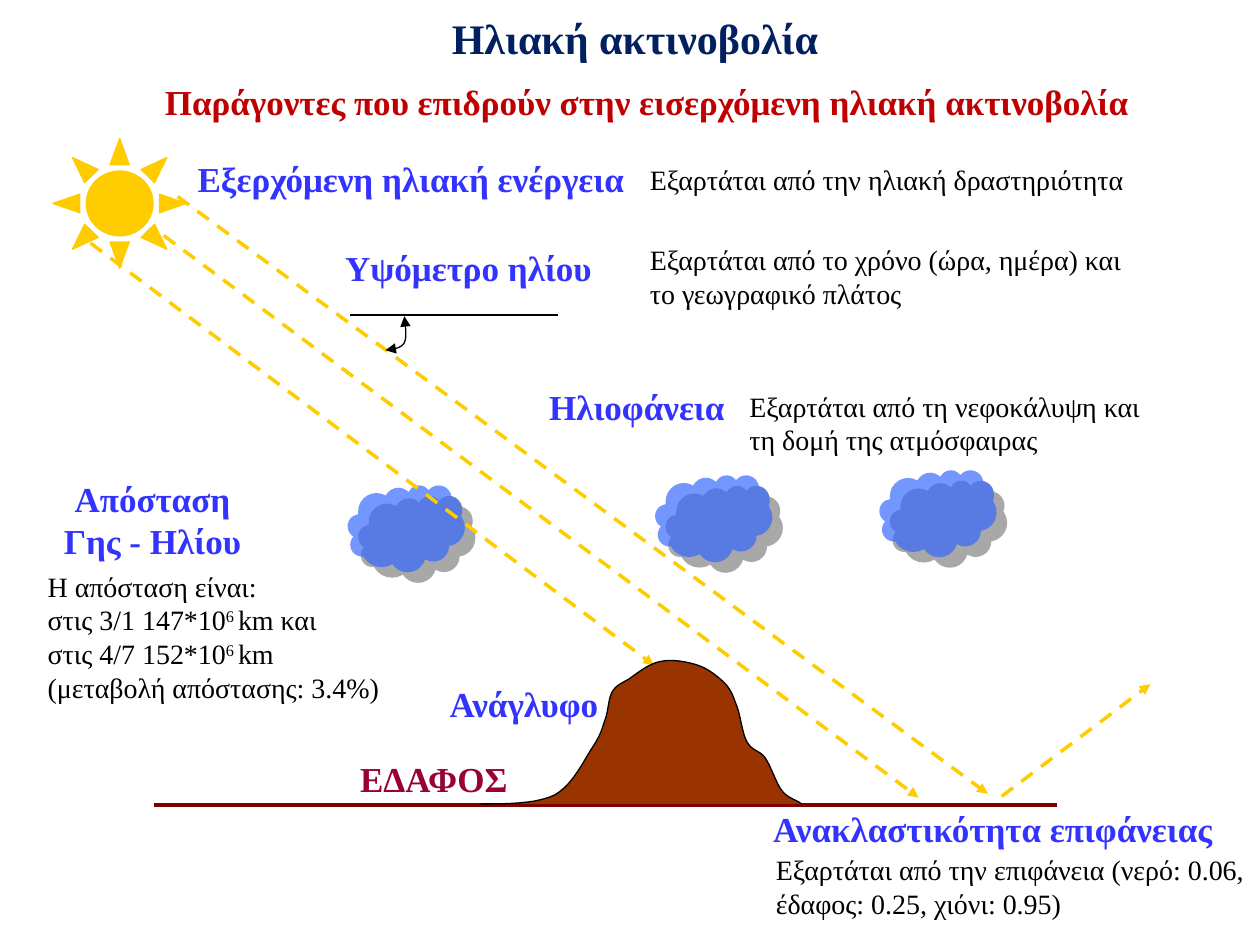
import itertools

import lxml.etree
import pptx
import pptx.dml.color
import pptx.enum.dml
import pptx.enum.shapes
import pptx.enum.text
import pptx.oxml.ns
import pptx.util

PX = pptx.util.Inches(1) // 100
NAVY = pptx.dml.color.RGBColor(0x00, 0x20, 0x60)
RED = pptx.dml.color.RGBColor(0xC0, 0x00, 0x00)
MAROON = pptx.dml.color.RGBColor(0x80, 0x00, 0x00)
CRIMSON = pptx.dml.color.RGBColor(0x99, 0x00, 0x33)
BLUE = pptx.dml.color.RGBColor(0x33, 0x33, 0xFF)
SKY_BLUE = pptx.dml.color.RGBColor(0x33, 0x66, 0xFF)
YELLOW = pptx.dml.color.RGBColor(0xFF, 0xCC, 0x00)
BROWN = pptx.dml.color.RGBColor(0x99, 0x33, 0x00)
BLACK = pptx.dml.color.RGBColor(0x00, 0x00, 0x00)
GREY = pptx.dml.color.RGBColor(0x80, 0x80, 0x80)

FONT = "Times New Roman"
TITLE = {"name": FONT, "size": pptx.util.Pt(24), "bold": True}
HEADING = {"name": FONT, "size": pptx.util.Pt(20), "bold": True}
NOTE = {"name": FONT, "size": pptx.util.Pt(16), "bold": False}
CENTER = pptx.enum.text.PP_ALIGN.CENTER
LEFT = pptx.enum.text.PP_ALIGN.LEFT

HILL = [
    (259, 115), (281, 115), (303, 115), (318, 108), (333, 100), (342, 79), (349, 69),
    (356, 58), (356, 54), (359, 46), (361, 39), (361, 31), (364, 26),
    (367, 21), (370, 20), (377, 16), (383, 12), (392, 4), (402, 2),
    (411, 0), (423, 2), (432, 5), (441, 8), (449, 15), (454, 20),
    (459, 26), (460, 30), (463, 38), (466, 46), (467, 59), (471, 66),
    (475, 73), (480, 72), (485, 78), (490, 85), (494, 99), (499, 105),
    (504, 111), (511, 112), (514, 115),
]
ELEVATION_ARC = [(264, 168), (270, 167), (276, 167), (279, 162), (281, 158), (280, 150), (279, 141)]
RAYS = [((30, 83), (477, 418)), ((88, 77), (687, 523)), ((99, 46), (742, 520))]
CLOUDS = [(234, 275), (478, 267), (656, 263)]

FACTORS = [
    ((147, 120, 359, 43), "Εξερχόμενη ηλιακή ενέργεια", LEFT,
     (359, 7, 476, 34), ["Εξαρτάται από την ηλιακή δραστηριότητα"], 0.9),
    ((264, 191, 216, 43), "Υψόμετρο ηλίου", LEFT,
     (242, -3, 417, 64), ["Εξαρτάται από το χρόνο (ώρα, ημέρα) και το γεωγραφικό πλάτος"], 1.0),
    ((426, 301, 159, 43), "Ηλιοφάνεια", LEFT,
     (159, 3, 350, 64), ["Εξαρτάται από τη νεφοκάλυψη και τη δομή της ατμόσφαιρας"], 1.0),
    ((25, 374, 192, 77), "Απόσταση Γης - Ηλίου", CENTER,
     (3, 73, 298, 118), ["Η απόσταση είναι:", "στις 3/1 147*10^6 ^km και",
                         "στις 4/7 152*10^6 ^km", "(μεταβολή απόστασης: 3.4%)"], 1.0),
    ((570, 636, 436, 43), "Ανακλαστικότητα επιφάνειας", CENTER,
     (36, 36, 394, 64), ["Εξαρτάται από την επιφάνεια (νερό: 0.06, έδαφος: 0.25, χιόνι: 0.95)"], 1.0),
]


def within(box, part):
    """Return the EMU position of a part given relative to a box."""
    x, y, *size = part
    return [v * PX for v in (box[0] + x, box[1] + y, *size)]


def add_child(parent, tag, **attributes):
    """Append a drawing element with the given attributes."""
    return lxml.etree.SubElement(parent, pptx.oxml.ns.qn(tag), attributes)


def write(frame, lines, style, color, align=LEFT, wrap=True, spacing=1.0):
    """Write lines into a text frame, raising the parts between carets."""
    frame.word_wrap = wrap
    frame.auto_size = pptx.enum.text.MSO_AUTO_SIZE.NONE
    for index, line in enumerate(lines):
        paragraph = frame.add_paragraph() if index else frame.paragraphs[0]
        paragraph.alignment = align
        paragraph.line_spacing = spacing
        paragraph.space_before = pptx.util.Pt(0)
        for position, words in enumerate(line.split("^")):
            run = paragraph.add_run()
            run.text = words
            for key, value in style.items():
                setattr(run.font, key, value)
            run.font.color.rgb = color
            if position % 2:
                run.font._element.set("baseline", "30000")


def label(slide, box, part, lines, style, color, **layout):
    """Add a text box relative to a box."""
    write(slide.shapes.add_textbox(*within(box, part)).text_frame, lines, style, color, **layout)


def add_line(slide, box, ends, color, width, ray=False):
    """Add a straight line, dashed and with an arrowhead when it is a ray."""
    start, end = (within(box, point) for point in ends)
    line = slide.shapes.add_connector(pptx.enum.shapes.MSO_CONNECTOR.STRAIGHT, *start, *end)
    line.line.color.rgb = color
    line.line.width = pptx.util.Pt(width)
    if ray:
        line.line.dash_style = pptx.enum.dml.MSO_LINE.DASH
        add_child(line.line._get_or_add_ln(), "a:tailEnd", type="triangle")
    add_child(line._element.spPr, "a:effectLst")


def add_curve(slide, box, points, steps=10):
    """Add an open outline that follows chained cubic curves."""
    track = []
    for first in range(0, len(points) - 1, 3):
        for step in range(1, steps + 1):
            t = step / steps
            weights = ((1 - t) ** 3, 3 * t * (1 - t) ** 2, 3 * t * t * (1 - t), t ** 3)
            track.append(tuple(
                round(sum(w * p for w, p in zip(weights, axis)))
                for axis in zip(*(within(box, point) for point in points[first:first + 4]))
            ))
    builder = slide.shapes.build_freeform(*within(box, points[0]))
    builder.add_line_segments(track, close=False)
    curve = builder.convert_to_shape()
    curve.shadow.inherit = False
    curve.line.color.rgb = BLACK
    curve.line.width = pptx.util.Pt(0.75)
    return curve


def add_cloud(slide, box, corner):
    """Add a translucent cloud with a hard grey shadow."""
    cloud = slide.shapes.add_shape(pptx.enum.shapes.MSO_SHAPE.CLOUD, *within(box, (*corner, 93, 69)))
    cloud.fill.solid()
    cloud.fill.fore_color.rgb = SKY_BLUE
    cloud.line.fill.background()
    cloud.shadow.inherit = False
    properties = cloud._element.spPr
    add_child(properties.find(".//" + pptx.oxml.ns.qn("a:srgbClr")), "a:alpha", val="68000")
    shadow = add_child(properties.find(pptx.oxml.ns.qn("a:effectLst")), "a:outerShdw",
                       dist=str(pptx.util.Pt(8.5)), dir="2700000", algn="ctr", rotWithShape="0")
    add_child(shadow, "a:srgbClr", val=str(GREY))


def header(slide, box):
    """Place the title and the subtitle."""
    rows = [
        ((0, 0, 924, 50), "Ηλιακή ακτινοβολία", TITLE, NAVY),
        ((28, 47, 887, 57), "Παράγοντες που επιδρούν στην εισερχόμενη ηλιακή ακτινοβολία", HEADING, RED),
    ]
    for holder, (part, words, style, color) in zip(slide.placeholders, rows):
        holder.left, holder.top, holder.width, holder.height = within(box, part)
        holder.text_frame.vertical_anchor = pptx.enum.text.MSO_ANCHOR.MIDDLE
        write(holder.text_frame, [words], style, color, align=CENTER)


def sky(slide, box):
    """Draw the clouds, the sun, its rays and the elevation angle."""
    for corner in CLOUDS:
        add_cloud(slide, box, corner)
    sun = slide.shapes.add_shape(pptx.enum.shapes.MSO_SHAPE.SUN, *within(box, (0, 0, 106, 103)))
    sun.fill.solid()
    sun.fill.fore_color.rgb = sun.line.color.rgb = YELLOW
    sun.line.width = pptx.util.Pt(0.75)
    sun.shadow.inherit = False
    for ends in RAYS:
        add_line(slide, box, ends, YELLOW, 2, ray=True)
    add_line(slide, box, ((236, 140), (401, 140)), BLACK, 0.75)
    arc = add_curve(slide, box, ELEVATION_ARC)
    arc.fill.background()
    for tag in ("a:headEnd", "a:tailEnd"):
        add_child(arc.line._get_or_add_ln(), tag, type="triangle")


def ground(slide, box):
    """Draw the ground line, the hill and the reflected ray."""
    add_line(slide, box, ((0, 116), (717, 116)), MAROON, 2)
    hill = add_curve(slide, box, HILL)
    hill.fill.solid()
    hill.fill.fore_color.rgb = BROWN
    add_line(slide, box, ((673, 109), (791, 20)), YELLOW, 2, ray=True)
    label(slide, box, (154, 73, 140, 43), ["ΕΔΑΦΟΣ"], HEADING, CRIMSON, wrap=False)
    label(slide, box, (225, 14, 140, 43), ["Ανάγλυφο"], HEADING, BLUE, wrap=False)


def factor(slide, box, heading, align, note_part, note, spacing):
    """Place the heading of a factor and its explanation."""
    label(slide, box, (0, 0, *box[2:]), [heading], HEADING, BLUE, align=align, wrap=align == CENTER)
    label(slide, box, note_part, note, NOTE, BLACK, spacing=spacing)


def main():
    """Build and save the slide."""
    deck = pptx.Presentation()
    deck.slide_width, deck.slide_height = 1000 * PX, 750 * PX
    slide = deck.slides.add_slide(deck.slide_layouts[0])
    header(slide, (42, 5))
    sky(slide, (42, 110))
    ground(slide, (122, 523))
    for box, *content in FACTORS:
        factor(slide, box, *content)
    deck.save("out.pptx")


if __name__ == "__main__":
    main()
